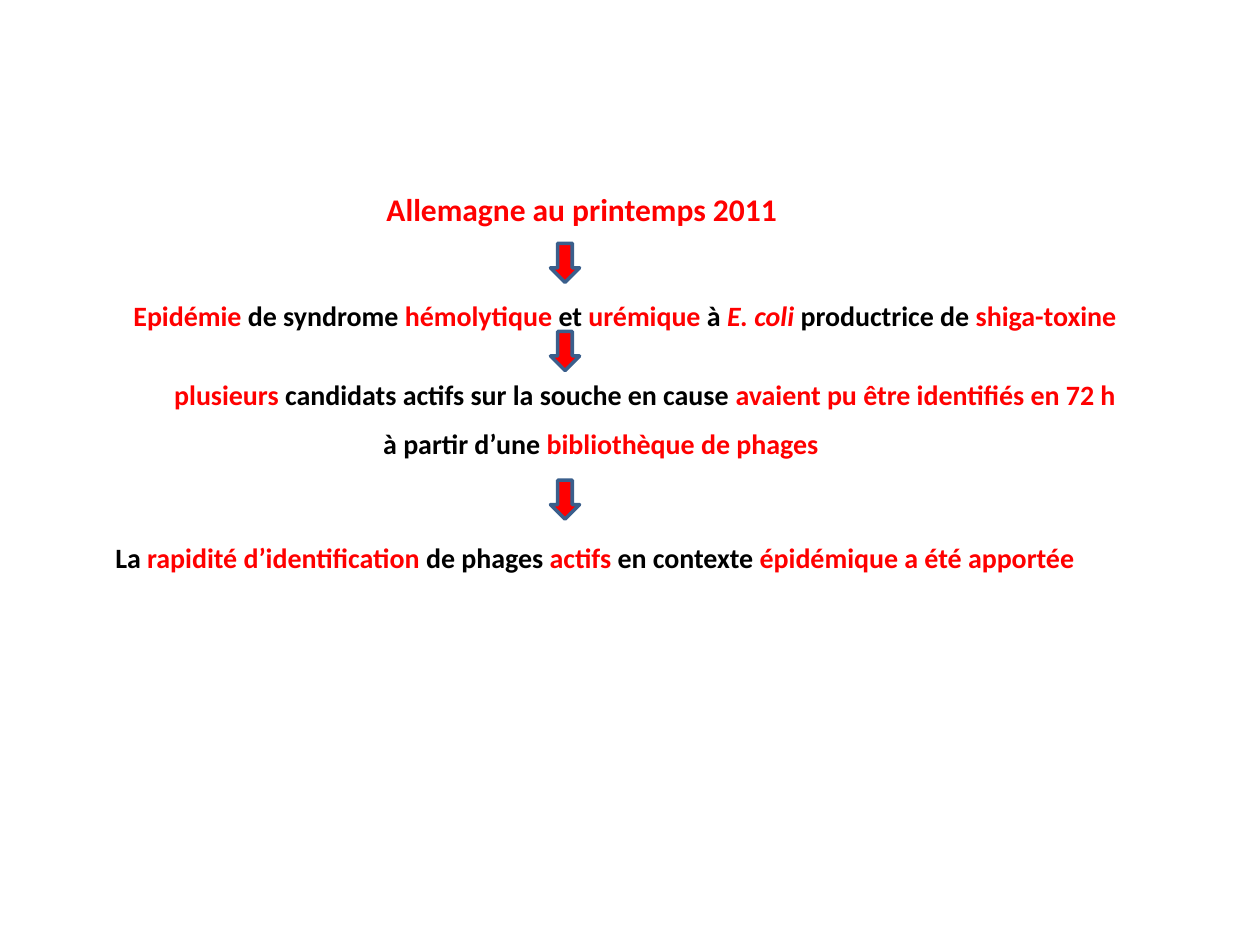
from pptx import Presentation
from pptx.dml.color import RGBColor
from pptx.enum.shapes import MSO_SHAPE as Shape
from pptx.enum.text import MSO_AUTO_SIZE as AutoSize, PP_ALIGN as Align
from pptx.util import Pt

COLORS = {"key": "FF0000", "plain": "000000", "outline": "3A5F8C"}

STATEMENTS = [
    ((22.3, 167, 669.6, 26.6), [
        ("Epidémie", "key"), (" de syndrome ", "plain"),
        ("hémolytique", "key"), (" et ", "plain"),
        ("urémique", "key"), (" à ", "plain"),
        ("E. coli ", "key", True), ("productrice de ", "plain"),
        ("shiga-toxine", "key")]),
    ((39.6, 212.4, 658, 26.6), [
        ("plusieurs", "key"),
        (" candidats actifs sur la souche en cause ", "plain"),
        ("avaient pu être identifiés en 72 h", "key")]),
    ((163.4, 240.5, 360, 26.6), [
        ("à partir d’une ", "plain"), ("bibliothèque de phages", "key")]),
    ((16.6, 305.3, 646.6, 26.6), [
        ("La ", "plain"), ("rapidité d’identification ", "key"),
        ("de phages ", "plain"), ("actifs ", "key"),
        ("en contexte ", "plain"), ("épidémique a été apportée", "key")]),
]
ARROW_LEFT, ARROW_SIZE = 314.6, (16.6, 22.3)
ARROW_TOPS = [139, 189.4, 274.3]


def color(name):
    """Return the named colour."""
    return RGBColor.from_string(COLORS[name])


def add_span(para, text, size=16, tone="plain", italic=False):
    """Append one formatted run of bold text."""
    span = para.add_run()
    span.text = text
    font = span.font
    font.name, font.size = "Calibri", Pt(size)
    font.bold, font.italic = True, italic
    font.color.rgb = color(tone)


def add_line(page, area, spans, size=16, align=Align.CENTER, wrap=True):
    """Place one line of mixed-colour text in its area."""
    box = page.shapes.add_textbox(*map(Pt, area))
    frame = box.text_frame
    frame.word_wrap = wrap
    frame.auto_size = AutoSize.SHAPE_TO_FIT_TEXT
    para = frame.paragraphs[0]
    para.alignment = align
    for text, tone, *italic in spans:
        add_span(para, text, size=size, tone=tone, italic=bool(italic))


def add_arrow(page, area):
    """Place one outlined down arrow in its area."""
    arrow = page.shapes.add_shape(Shape.DOWN_ARROW, *map(Pt, area))
    arrow.shadow.inherit = False
    arrow.fill.solid()
    arrow.fill.fore_color.rgb = color("key")
    arrow.line.color.rgb = color("outline")
    arrow.line.width = Pt(2)


def main():
    """Build the outbreak slide and save it."""
    deck = Presentation()
    deck.slide_width, deck.slide_height = Pt(720), Pt(540)
    page = deck.slides.add_slide(deck.slide_layouts[6])
    add_line(page, (213.8, 105.1, 239.8, 28.8),
             [("Allemagne au printemps 2011", "key")],
             size=18, align=Align.LEFT, wrap=False)
    for area, spans in STATEMENTS:
        add_line(page, area, spans)
    for top in ARROW_TOPS:
        add_arrow(page, (ARROW_LEFT, top, *ARROW_SIZE))
    deck.save("out.pptx")


if __name__ == "__main__":
    main()
